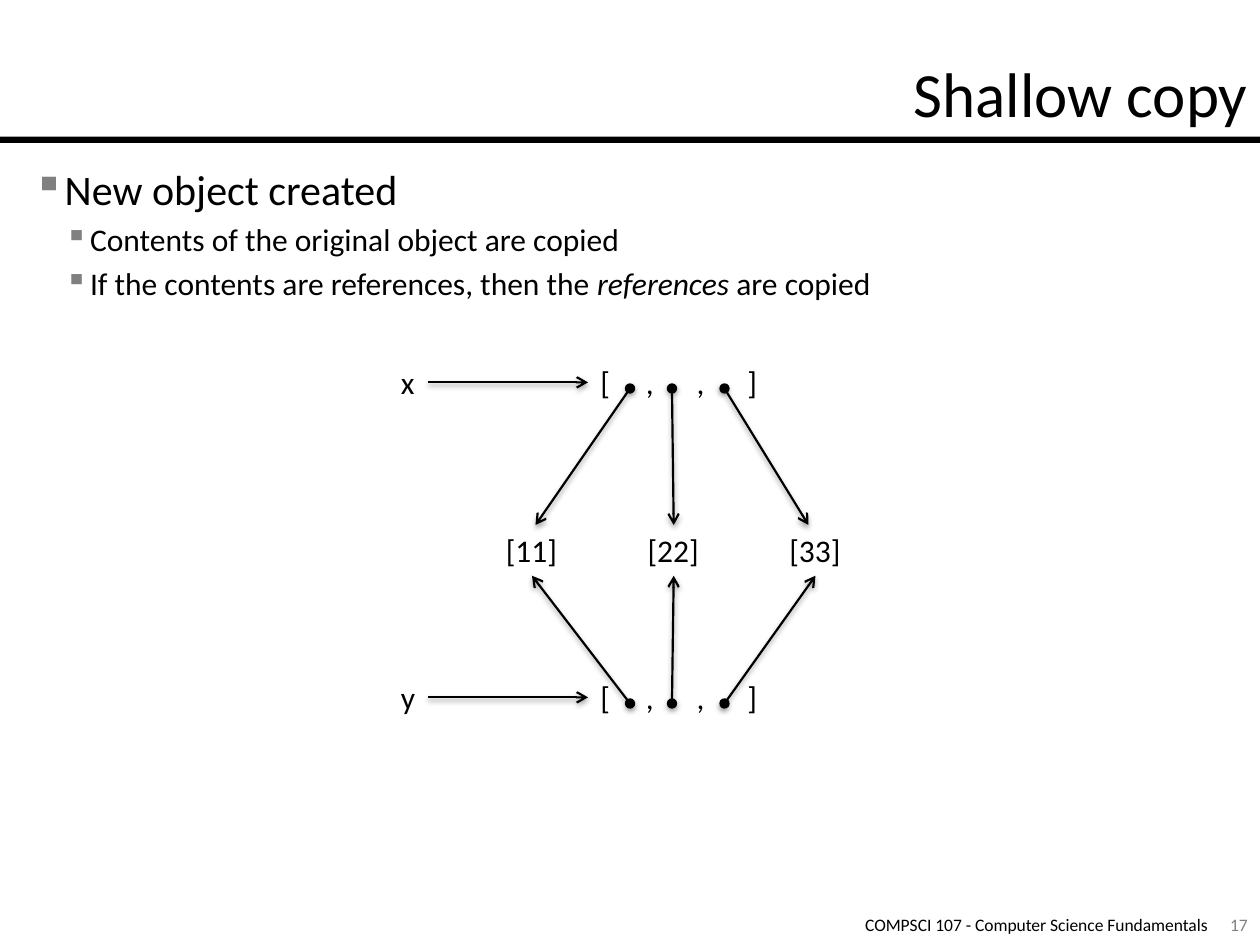
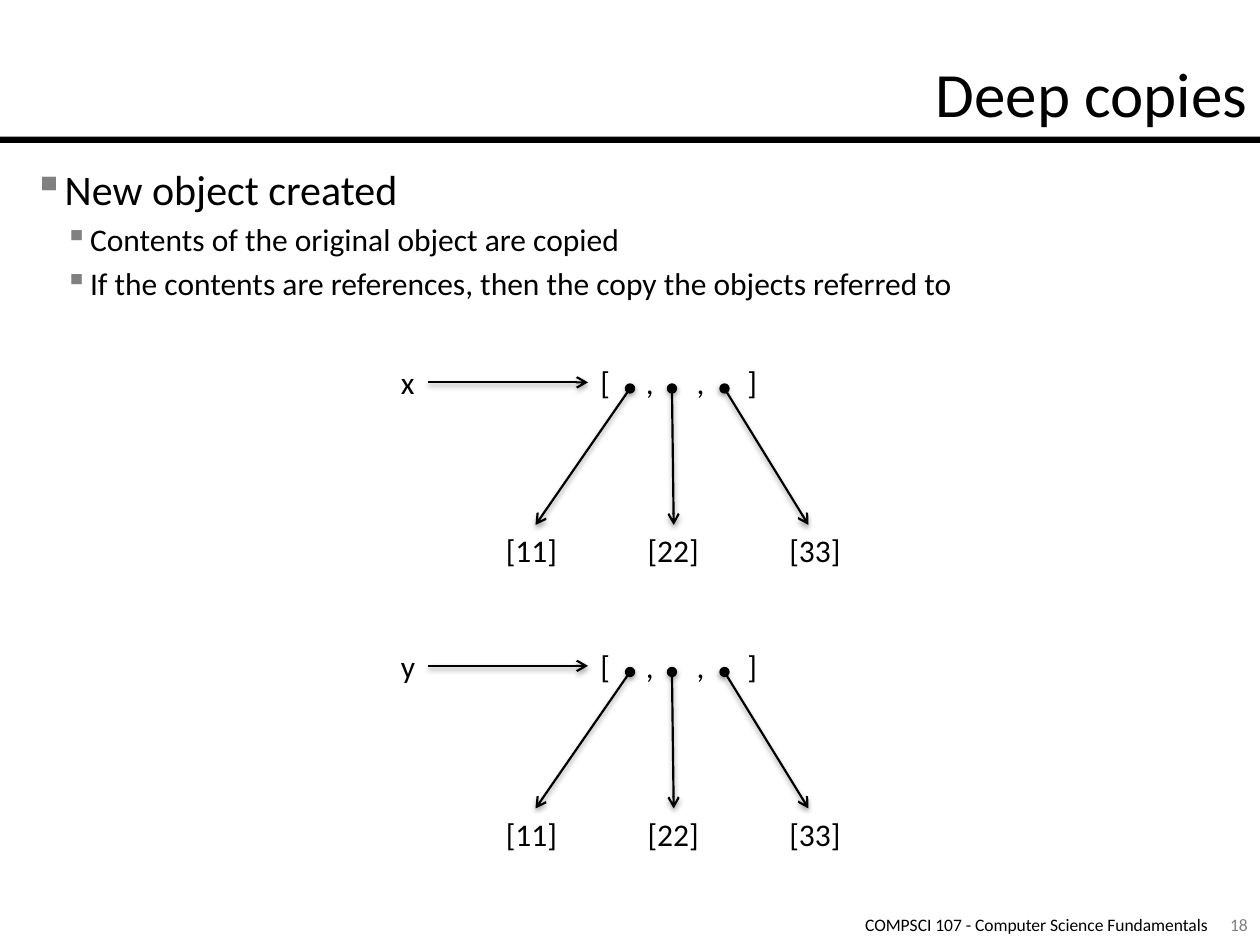
from dataclasses import dataclass

from lxml import etree
from pptx import Presentation
from pptx.dml.color import RGBColor
from pptx.enum.shapes import MSO_CONNECTOR, MSO_SHAPE
from pptx.enum.text import MSO_ANCHOR, PP_ALIGN
from pptx.oxml.ns import qn
from pptx.util import Pt

STRAIGHT = MSO_CONNECTOR.STRAIGHT
RECTANGLE = MSO_SHAPE.RECTANGLE
TOP, MIDDLE, BOTTOM = MSO_ANCHOR.TOP, MSO_ANCHOR.MIDDLE, MSO_ANCHOR.BOTTOM
LEFT, CENTER, RIGHT = PP_ALIGN.LEFT, PP_ALIGN.CENTER, PP_ALIGN.RIGHT
TOP_SIDE, LEFT_SIDE, BOTTOM_SIDE, RIGHT_SIDE = range(4)


@dataclass(frozen=True)
class Theme:
    font: str = "Calibri"
    ink: str = "000000"
    muted: str = "808080"
    title_size: int = 36
    heading_size: int = 24
    text_size: int = 18
    footer_size: int = 10
    line_width: float = 1.25


@dataclass(frozen=True)
class Box:
    left: float
    top: float
    width: float
    height: float

    def lengths(self):
        return [Pt(value) for value in (self.left, self.top, self.width, self.height)]


THEME = Theme()
TITLE_BOX = Box(0, 0, 720, 78)
BODY_BOX = Box(12, 90, 696, 426)
FOOTER_BOX = Box(348, 522, 342, 12)
NUMBER_BOX = Box(690, 522, 36, 12)
FOOTER = "COMPSCI 107 - Computer Science Fundamentals"
LIST_TEXT = "[\t,\t,\t]"
LIST_TABS = (26, 55, 84)
VALUES = ("[11]", "[22]", "[33]")
DOT_OFFSETS = (138, 162, 192)
LABEL_HEIGHT = 29
DIAGRAM_LEFT = 222
X_TOP = 204


def add_xml(parent, tag, **attributes):
    return etree.SubElement(parent, qn(tag), attributes)


def style_paragraph(paragraph, size, color=THEME.ink, align=LEFT):
    paragraph.alignment = align
    paragraph.font.name = THEME.font
    paragraph.font.size = Pt(size)
    paragraph.font.color.rgb = RGBColor.from_string(color)


def add_text(shapes, box, text, size, color=THEME.ink, align=LEFT,
             anchor=TOP, wrap=True, inset=None, tabs=()):
    shape = shapes.add_textbox(*box.lengths())
    frame = shape.text_frame
    frame.word_wrap = wrap
    frame.vertical_anchor = anchor
    if inset is not None:
        frame.margin_left = frame.margin_right = Pt(inset)
        frame.margin_top = frame.margin_bottom = Pt(inset)
    paragraph = frame.paragraphs[0]
    paragraph.text = text
    if tabs:
        tab_list = add_xml(paragraph._p.get_or_add_pPr(), "a:tabLst")
        for position in tabs:
            add_xml(tab_list, "a:tab", pos=str(Pt(position)), algn="l")
    style_paragraph(paragraph, size, color, align)
    return shape


def add_arrow(shapes, start, end, dotted=False):
    connector = shapes.add_connector(STRAIGHT, *[Pt(value) for value in (*start, *end)])
    connector.line.color.rgb = RGBColor.from_string(THEME.ink)
    connector.line.width = Pt(THEME.line_width)
    line = connector.line._get_or_add_ln()
    if dotted:
        add_xml(line, "a:headEnd", type="oval")
    add_xml(line, "a:tailEnd", type="arrow")
    effects = add_xml(connector._element.spPr, "a:effectLst")
    shadow = add_xml(effects, "a:outerShdw", blurRad=str(Pt(3.1)), dist=str(Pt(1.6)),
                     dir="5400000", rotWithShape="0")
    shadow_color = add_xml(shadow, "a:srgbClr", val=THEME.ink)
    add_xml(shadow_color, "a:alpha", val="38000")
    return connector


def add_title(slide, box, title):
    add_text(slide.shapes, box, title, THEME.title_size, align=RIGHT, anchor=BOTTOM)
    rule = slide.shapes.add_shape(
        RECTANGLE, *Box(box.left, box.top + box.height, box.width, 3.6).lengths())
    rule.shadow.inherit = False
    rule.fill.solid()
    rule.fill.fore_color.rgb = RGBColor.from_string(THEME.ink)
    rule.line.fill.background()


def add_footer(slide, number):
    add_text(slide.shapes, FOOTER_BOX, FOOTER, THEME.footer_size,
             align=RIGHT, anchor=MIDDLE, inset=0)
    add_text(slide.shapes, NUMBER_BOX, str(number), THEME.footer_size,
             THEME.muted, CENTER, MIDDLE)


def add_bullets(slide, box, bullets):
    frame = slide.shapes.add_textbox(*box.lengths()).text_frame
    frame.word_wrap = True
    for index, (level, runs) in enumerate(bullets):
        paragraph = frame.add_paragraph() if index else frame.paragraphs[0]
        paragraph.level = level
        size = THEME.text_size if level else THEME.heading_size
        if index:
            paragraph.space_before = Pt(0.2 * size)
        properties = paragraph._p.get_or_add_pPr()
        properties.set("marL", str(Pt(14.4 + 18 * level)))
        properties.set("indent", str(Pt(-14.4)))
        bullet_color = add_xml(properties, "a:buClr")
        add_xml(bullet_color, "a:srgbClr", val=THEME.muted)
        add_xml(properties, "a:buChar", char="▪")
        style_paragraph(paragraph, size)
        for text, italic in runs:
            run = paragraph.add_run()
            run.text = text
            if italic:
                run.font.italic = True


def add_named_list(shapes, left, top, name):
    label = add_text(shapes, Box(left, top, 22.5, LABEL_HEIGHT), name,
                     THEME.text_size, wrap=False)
    list_box = add_text(shapes, Box(left + 114, top, 109, LABEL_HEIGHT), LIST_TEXT,
                        THEME.text_size, tabs=LIST_TABS)
    arrow = add_arrow(shapes, (left + 23, top + 15), (left + 114, top + 15))
    arrow.begin_connect(label, RIGHT_SIDE)
    arrow.end_connect(list_box, LEFT_SIDE)


def add_values(shapes, left, top):
    return [add_text(shapes, Box(left + 81 * index, top, 44, LABEL_HEIGHT), value,
                     THEME.text_size, wrap=False)
            for index, value in enumerate(VALUES)]


def add_references(shapes, left, top, values, side, tip_shifts=(0, 0, 0)):
    for dot, value, shift in zip(DOT_OFFSETS, values, tip_shifts):
        tip_left = value.left.pt + value.width.pt / 2 + shift
        tip_top = value.top.pt + (value.height.pt if side == BOTTOM_SIDE else 0)
        arrow = add_arrow(shapes, (left + dot, top + 18), (tip_left, tip_top), dotted=True)
        if shift == 0:
            arrow.end_connect(value, side)


def add_list_with_values(slide, left, top, name):
    shapes = slide.shapes.add_group_shape().shapes
    add_named_list(shapes, left, top, name)
    values = add_values(shapes, left + 60, top + 96)
    add_references(shapes, left, top, values, TOP_SIDE, (2, 0, -4))
    return values


def add_list_sharing_values(slide, left, top, name, values):
    shapes = slide.shapes.add_group_shape().shapes
    add_named_list(shapes, left, top, name)
    add_references(shapes, left, top, values, BOTTOM_SIDE)


def add_copy_slide(presentation, number, title, last_bullet):
    slide = presentation.slides.add_slide(presentation.slide_layouts[6])
    add_title(slide, TITLE_BOX, title)
    add_bullets(slide, BODY_BOX, [
        (0, [("New object created", False)]),
        (1, [("Contents of the original object are copied", False)]),
        (1, last_bullet),
    ])
    add_footer(slide, number)
    return slide


def main():
    presentation = Presentation()
    presentation.slide_width, presentation.slide_height = Pt(720), Pt(540)

    shallow = add_copy_slide(presentation, 17, "Shallow copy", [
        ("If the contents are references, then the ", False),
        ("references", True),
        (" are copied", False),
    ])
    shared_values = add_list_with_values(shallow, DIAGRAM_LEFT, X_TOP, "x")
    add_list_sharing_values(shallow, DIAGRAM_LEFT, 384, "y", shared_values)

    deep = add_copy_slide(presentation, 18, "Deep copies", [
        ("If the contents are references, then the copy the objects referred to", False),
    ])
    for name, top in (("x", X_TOP), ("y", 366)):
        add_list_with_values(deep, DIAGRAM_LEFT, top, name)

    presentation.save("out.pptx")


if __name__ == "__main__":
    main()
